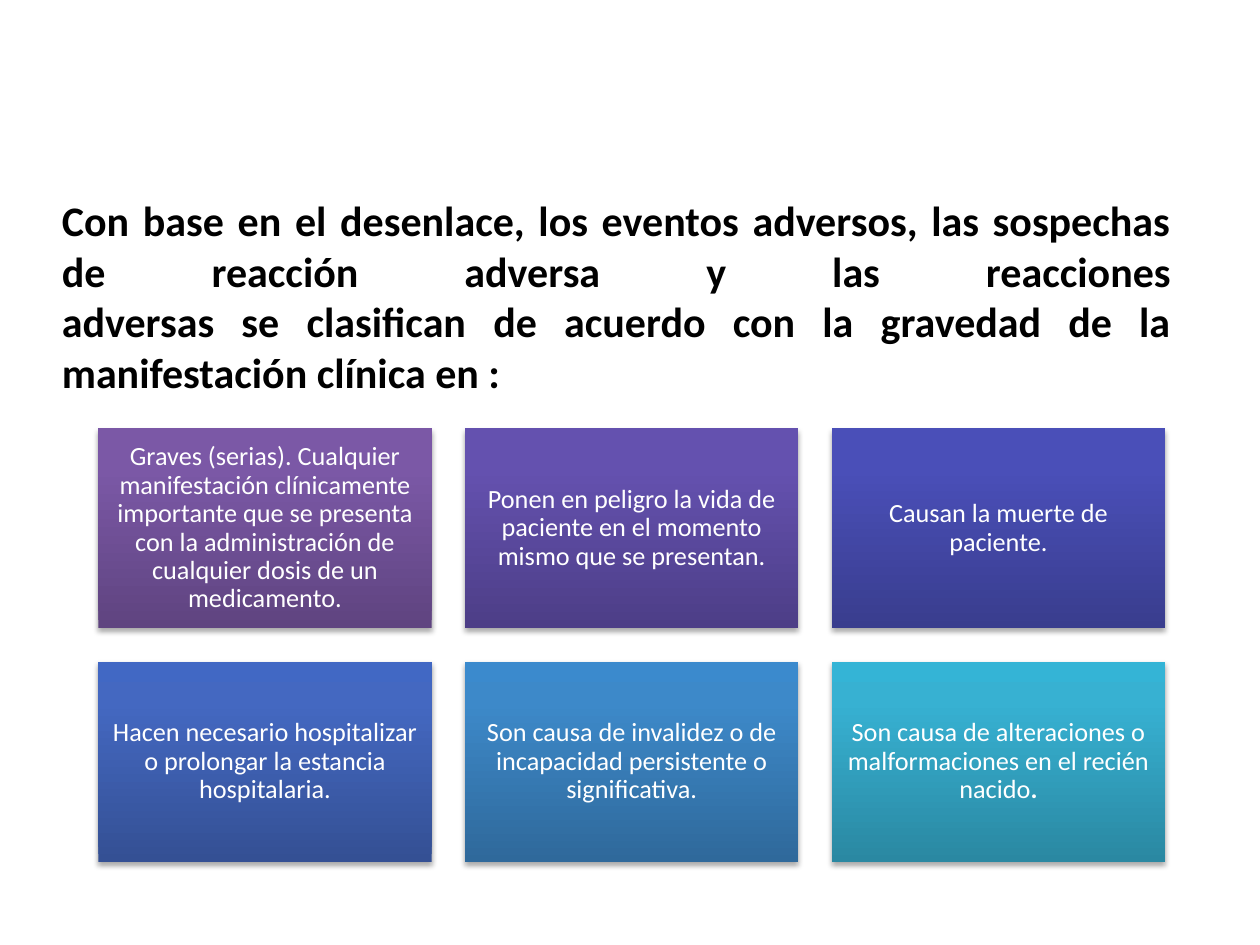
from copy import deepcopy
from dataclasses import dataclass

from lxml import etree
from pptx import Presentation
from pptx.dml.color import RGBColor
from pptx.enum.shapes import MSO_SHAPE
from pptx.enum.text import MSO_ANCHOR, PP_ALIGN
from pptx.oxml.ns import qn
from pptx.util import Pt

RECT = MSO_SHAPE.RECTANGLE
MIDDLE = MSO_ANCHOR.MIDDLE
CENTER, JUSTIFY = PP_ALIGN.CENTER, PP_ALIGN.JUSTIFY

COLORS = {
    "black": "000000", "white": "FFFFFF",
    "purple": ("5F4480", "7B58A6", "7C57A8"),
    "violet": ("4D3E87", "6451AF", "6450B2"),
    "indigo": ("393D8E", "4A4FB8", "484EBB"),
    "blue": ("345094", "4468C1", "4168C4"),
    "sky": ("2F699B", "3D89C9", "3B8ACD"),
    "teal": ("2A88A2", "37B1D2", "34B4D6"),
}
STOPS = (0, 0.8, 1)
COLS, LEFT, TOP = 3, 56.2, 244.8
WIDTH, HEIGHT, GAP = 190.5, 114.3, 19.05
TITLE = ("Con base en el desenlace, los eventos adversos, las sospechas de reacción "
         "adversa y las reacciones\vadversas se clasifican de acuerdo con la gravedad "
         "de la manifestación clínica en :")


@dataclass
class Card:
    tone: str
    text: str
    tail: str = ""


CARDS = [
    Card("purple", "Graves (serias). Cualquier manifestación clínicamente importante que se "
         "presenta con la administración de cualquier dosis de un medicamento."),
    Card("violet", "Ponen en peligro la vida de paciente en el momento mismo que se presentan."),
    Card("indigo", "Causan la muerte de paciente."),
    Card("blue", "Hacen necesario hospitalizar o prolongar la estancia hospitalaria."),
    Card("sky", "Son causa de invalidez o de incapacidad persistente o significativa."),
    Card("teal", "Son causa de alteraciones o malformaciones en el recién nacido", "."),
]


def write(frame, text: str, *, size: float, color: str, align, bold: bool = False,
          tail: str = "", space: float = 1, inset: tuple = (7.2, 3.6)) -> None:
    frame.word_wrap = True
    frame.vertical_anchor = MIDDLE
    frame.margin_left = frame.margin_right = Pt(inset[0])
    frame.margin_top = frame.margin_bottom = Pt(inset[1])
    para = frame.paragraphs[0]
    para.text = text
    para.alignment = align
    para.line_spacing = space
    if tail:
        para.add_run().text = tail
    for run in para.runs:
        font = run.font
        font.name, font.size = "Calibri", Pt(size)
        font.bold = bold or (bool(tail) and run.text == tail)
        font.color.rgb = RGBColor.from_string(COLORS[color])


def shade(shape, tone: str) -> None:
    fill = shape.fill
    fill.gradient()
    fill.gradient_angle = 90
    stops = shape._element.spPr.find(".//" + qn("a:gsLst"))
    stops.append(deepcopy(stops[-1]))
    for stop, place, color in zip(fill.gradient_stops, STOPS, COLORS[tone]):
        stop.position = place
        stop.color.rgb = RGBColor.from_string(color)


def drop(shape) -> None:
    shape.shadow.inherit = False
    effects = shape._element.spPr.find(qn("a:effectLst"))
    outer = etree.SubElement(effects, qn("a:outerShdw"), blurRad=str(Pt(3.1)),
                             dist=str(Pt(1.8)), dir="5400000", rotWithShape="0")
    color = etree.SubElement(outer, qn("a:srgbClr"), val=COLORS["black"])
    etree.SubElement(color, qn("a:alpha"), val="35000")


def draw(slide, card: Card, row: int, col: int) -> None:
    shape = slide.shapes.add_shape(
        RECT, Pt(LEFT + col * (WIDTH + GAP)), Pt(TOP + row * (HEIGHT + GAP)),
        Pt(WIDTH), Pt(HEIGHT))
    shade(shape, card.tone)
    shape.line.fill.background()
    drop(shape)
    write(shape.text_frame, card.text, tail=card.tail, size=15, color="white",
          align=CENTER, space=0.9, inset=(4.5, 4.5))


def main() -> None:
    """Build the slide on adverse events classed by severity."""
    deck = Presentation()
    deck.slide_width, deck.slide_height = Pt(720), Pt(540)
    slide = deck.slides.add_slide(deck.slide_layouts[6])
    title = slide.shapes.add_textbox(Pt(28.3), Pt(124), Pt(648), Pt(90))
    write(title.text_frame, TITLE, size=24, color="black", align=JUSTIFY, bold=True)
    for index, card in enumerate(CARDS):
        draw(slide, card, *divmod(index, COLS))
    deck.save("out.pptx")


if __name__ == "__main__":
    main()
